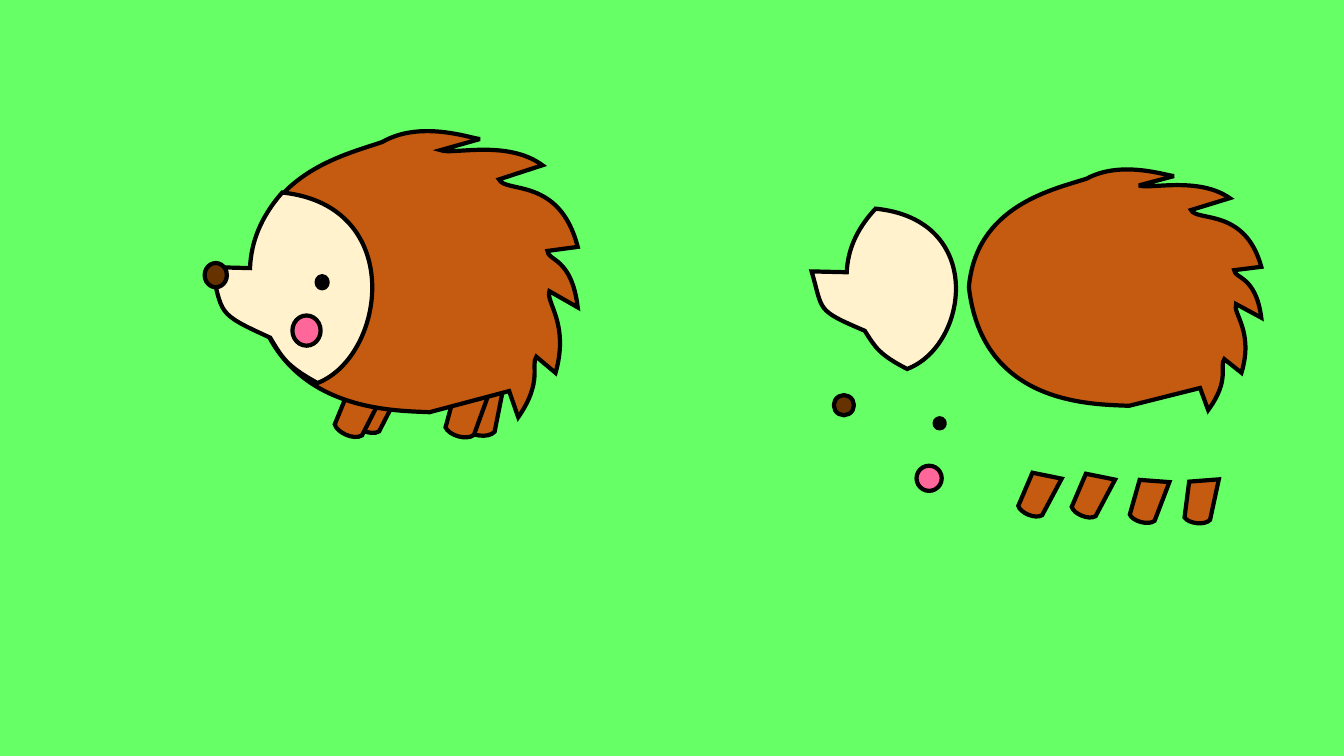
from dataclasses import dataclass
from lxml.etree import SubElement
from pptx import Presentation
from pptx.dml.color import RGBColor
from pptx.enum.shapes import MSO_SHAPE
from pptx.oxml.ns import qn
from pptx.util import Inches, Pt


@dataclass(frozen=True)
class Theme:
    meadow: str = "66FF66"
    fur: str = "C55A11"
    skin: str = "FFF2CC"
    nose: str = "663300"
    cheek: str = "FF6699"
    ink: str = "000000"
    outline: float = 3


THEME = Theme()

# Outlines in hundredths of an inch: one point starts or draws a line, three draw a curve.
LEG = (49, 51), [
    [(16, 0)],
    [(0, 39)],
    [(2, 47), (19, 55), (27, 50)],
    [(49, 7)],
]
BODY = (325, 283), [
    [(0, 139)],
    [(8, 43), (93, 24), (131, 11)],
    [(169, -11), (218, 7), (228, 8)],
    [(189, 19)],
    [(200, 24), (255, 8), (290, 34)],
    [(247, 48)],
    [(253, 62), (307, 45), (325, 115)],
    [(295, 119)],
    [(295, 129), (319, 125), (325, 175)],
    [(297, 159)],
    [(293, 170), (317, 191), (303, 240)],
    [(284, 224)],
    [(278, 232), (291, 248), (266, 284)],
    [(257, 258)],
    [(178, 279)],
    [(138, 277), (15, 279), (0, 139)],
]
FACE = (160, 189), [
    [(71, 0)],
    [(194, 13), (174, 162), (106, 189)],
    [(75, 172), (71, 164), (59, 144)],
    [(4, 119), (13, 121), (0, 74)],
    [(39, 75)],
    [(40, 50), (49, 25), (71, 0)],
]

LEG_TURNS = [0, -15.8, 0, -7.2]

# Part boxes (left, top, width, height) relative to the hedgehog's own corner.
ASSEMBLED = {
    "legs": [(left, top, 0.49, 0.51) for left, top in
             [(1.46, 2.48), (2.54, 2.5), (1.29, 2.52), (2.37, 2.52)]],
    "body": (0.45, 0, 3.25, 2.83),
    "face": (0.06, 0.61, 1.6, 1.89),
    "nose": (0, 1.31, 0.22, 0.24),
    "cheek": (0.87, 1.83, 0.28, 0.3),
    "eye": (1.11, 1.44, 0.11, 0.12),
}
SEPARATED = {
    "legs": [(left, top, 0.43, 0.43) for left, top in
             [(2.58, 3.02), (3.66, 3.07), (2.05, 3.01), (3.14, 3.07)]],
    "body": (1.56, 0, 2.9, 2.38),
    "face": (0, 0.39, 1.43, 1.59),
    "nose": (0.22, 2.24, 0.2, 0.2),
    "cheek": (1.04, 2.94, 0.25, 0.25),
    "eye": (1.22, 2.47, 0.1, 0.1),
}


def paint(shape, color):
    shape.shadow.inherit = False
    shape.fill.solid()
    shape.fill.fore_color.rgb = RGBColor.from_string(color)
    shape.line.color.rgb = RGBColor.from_string(THEME.ink)
    shape.line.width = Pt(THEME.outline)


def add_outline(shapes, outline, box, color, turn=0):
    """Stretch a curved outline over the box, then turn it about its centre."""
    (width, height), segments = outline
    left, top, box_width, box_height = map(Inches, box)
    right, bottom = left + box_width, top + box_height
    builder = shapes.build_freeform(left, top)
    builder.add_line_segments([(right, top), (right, bottom), (left, bottom)])
    shape = builder.convert_to_shape()

    contour = shape.element.find(".//" + qn("a:path"))
    for step in list(contour):
        contour.remove(step)
    contour.set("w", str(width * 100))
    contour.set("h", str(height * 100))
    for index, points in enumerate(segments):
        tag = "a:moveTo" if index == 0 else "a:cubicBezTo" if len(points) == 3 else "a:lnTo"
        step = SubElement(contour, qn(tag))
        for x, y in points:
            SubElement(step, qn("a:pt"), x=str(x * 100), y=str(y * 100))
    SubElement(contour, qn("a:close"))

    paint(shape, color)
    SubElement(shape.element.find(".//" + qn("a:ln")), qn("a:miter"), lim="800000")
    shape.rotation = turn


def add_oval(shapes, box, color):
    paint(shapes.add_shape(MSO_SHAPE.OVAL, *map(Inches, box)), color)


def add_hedgehog(page, corner, parts):
    shapes = page.shapes.add_group_shape().shapes

    def placed(box):
        return (corner[0] + box[0], corner[1] + box[1], box[2], box[3])

    for box, turn in zip(parts["legs"], LEG_TURNS):
        add_outline(shapes, LEG, placed(box), THEME.fur, turn)
    add_outline(shapes, BODY, placed(parts["body"]), THEME.fur)
    add_outline(shapes, FACE, placed(parts["face"]), THEME.skin)
    for name, color in [("nose", THEME.nose), ("cheek", THEME.cheek), ("eye", THEME.ink)]:
        add_oval(shapes, placed(parts[name]), color)


def main():
    deck = Presentation()
    deck.slide_width, deck.slide_height = Inches(13.33), Inches(7.5)
    page = deck.slides.add_slide(deck.slide_layouts[6])
    page.background.fill.solid()
    page.background.fill.fore_color.rgb = RGBColor.from_string(THEME.meadow)
    add_hedgehog(page, (2.03, 1.3), ASSEMBLED)
    add_hedgehog(page, (8.05, 1.68), SEPARATED)
    deck.save("out.pptx")


if __name__ == "__main__":
    main()
